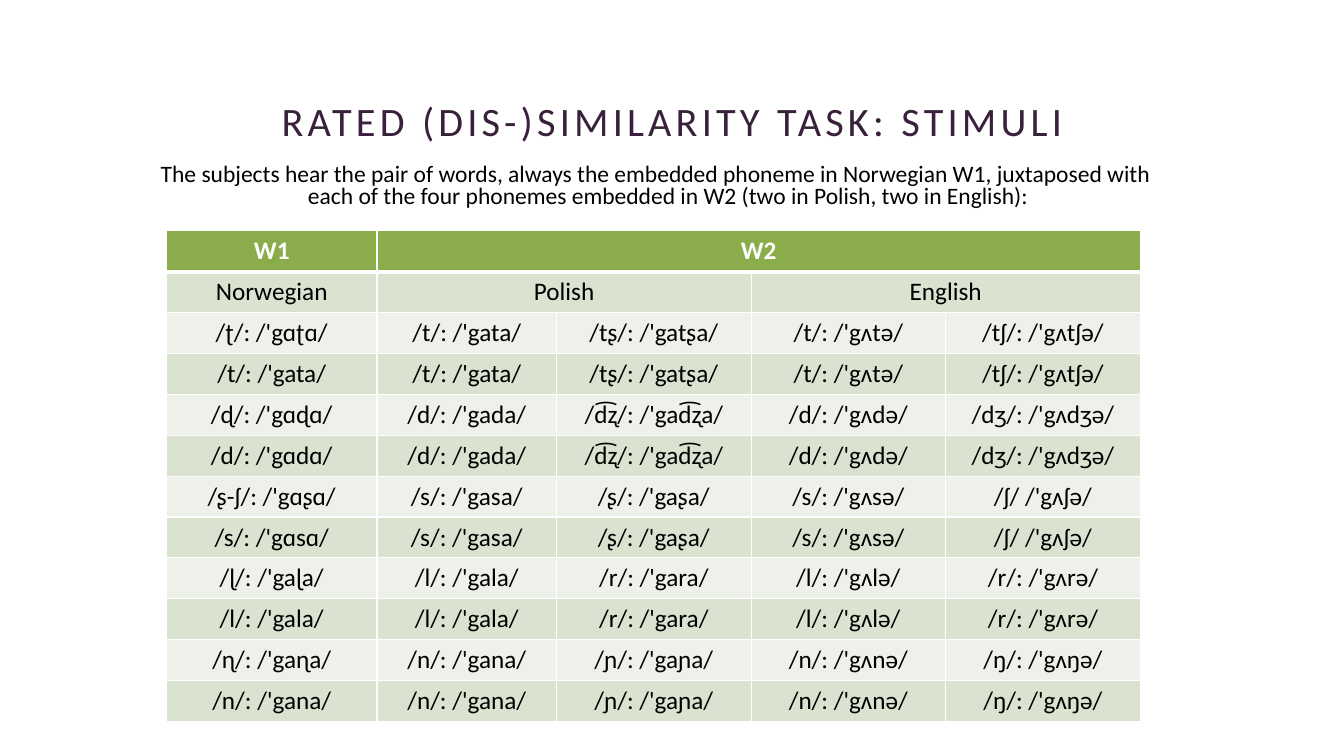
from lxml import etree
from pptx import Presentation
from pptx.dml.color import RGBColor
from pptx.enum.text import MSO_ANCHOR, PP_ALIGN
from pptx.oxml.ns import qn
from pptx.util import Inches, Pt

CENTER = PP_ALIGN.CENTER
TOP = MSO_ANCHOR.TOP
MIDDLE = MSO_ANCHOR.MIDDLE
BOTTOM = MSO_ANCHOR.BOTTOM

WHITE, BLACK, PLUM = "FFFFFF", "000000", "39213B"
GREEN, SAGE, PALE = "8AAC4A", "DAE3D0", "EDF1E9"


def write_text(frame, text, size, color, bold=False):
    """Put one centred paragraph in a text frame and return it."""
    paragraph = frame.paragraphs[0]
    paragraph.alignment = CENTER
    run = paragraph.add_run()
    run.text = text
    formats = {"name": "Calibri", "size": Pt(size), "bold": bold}
    for attribute, value in formats.items():
        setattr(run.font, attribute, value)
    run.font.color.rgb = RGBColor.from_string(color)
    return paragraph


def add_borders(cell, widths):
    """Draw white cell borders; widths maps a side tag to points."""
    properties = cell._tc.get_or_add_tcPr()
    for side, width in widths.items():
        line = etree.SubElement(properties, qn(f"a:{side}"), w=str(Pt(width)))
        fill = etree.SubElement(line, qn("a:solidFill"))
        etree.SubElement(fill, qn("a:srgbClr"), val=WHITE)


presentation = Presentation()
presentation.slide_width = Inches(13.33)
presentation.slide_height = Inches(7.5)
slide = presentation.slides.add_slide(presentation.slide_layouts[6])

# Title and introduction
text_boxes = [
    ((1.48, 0.7, 10.38, 0.79), BOTTOM, "RATED (DIS-)SIMILARITY TASK: STIMULI",
     28.8, PLUM, 0.9),
    ((1.25, 1.58, 10.5, 0.58), TOP,
     "The subjects hear the pair of words, always the embedded phoneme in "
     "Norwegian W1, juxtaposed with each of the four phonemes embedded in W2 "
     "(two in Polish, two in English):", 16.8, BLACK, 0.8),
]
paragraphs = []
for box, anchor, text, size, color, line_spacing in text_boxes:
    frame = slide.shapes.add_textbox(*map(Inches, box)).text_frame
    frame.word_wrap = True
    frame.vertical_anchor = anchor
    paragraph = write_text(frame, text, size, color)
    paragraph.line_spacing = line_spacing
    paragraphs.append(paragraph)

title, introduction = paragraphs
title.runs[0].font._element.set("spc", "300")
indent = introduction._p.get_or_add_pPr()
indent.set("marL", str(Inches(0.25)))
indent.set("indent", str(Inches(-0.25)))

# Each pair of Norwegian words shares the same Polish and English words
stimuli = [
    (["/ʈ/: /'gɑʈɑ/", "/t/: /'gata/"],
     ["/t/: /'gata/", "/tʂ/: /'gatʂa/", "/t/: /'gʌtə/", "/tʃ/: /'gʌtʃə/"]),
    (["/ɖ/: /'gɑɖɑ/", "/d/: /'gɑdɑ/"],
     ["/d/: /'gada/", "/d͡ʐ/: /'gad͡ʐa/", "/d/: /'gʌdə/", "/dʒ/: /'gʌdʒə/"]),
    (["/ʂ-ʃ/: /'gɑʂɑ/", "/s/: /'gɑsɑ/"],
     ["/s/: /'gasa/", "/ʂ/: /'gaʂa/", "/s/: /'gʌsə/", "/ʃ/ /'gʌʃə/"]),
    (["/ɭ/: /'gaɭa/", "/l/: /'gala/"],
     ["/l/: /'gala/", "/r/: /'gara/", "/l/: /'gʌlə/", "/r/: /'gʌrə/"]),
    (["/ɳ/: /'gaɳa/", "/n/: /'gana/"],
     ["/n/: /'gana/", "/ɲ/: /'gaɲa/", "/n/: /'gʌnə/", "/ŋ/: /'gʌŋə/"]),
]
rows = [["W1", "W2", "", "", ""], ["Norwegian", "Polish", "", "English", ""]]
for norwegian_words, second_words in stimuli:
    for norwegian in norwegian_words:
        rows.append([norwegian, *second_words])

column_widths = [2.09, 1.78, 1.93, 1.93, 1.93]
table = slide.shapes.add_table(
    len(rows), len(column_widths),
    Inches(1.65), Inches(2.29), Inches(9.67), Inches(4.87)).table
for column, width in zip(table.columns, column_widths):
    column.width = Inches(width)

for row, first, last in [(0, 1, 4), (1, 1, 2), (1, 3, 4)]:
    table.cell(row, first).merge(table.cell(row, last))

for row_index, words in enumerate(rows):
    header = row_index == 0
    if header:
        fill_color = GREEN
    else:
        fill_color = SAGE if row_index % 2 else PALE
    borders = {"lnL": 1, "lnR": 1,
               "lnT": 3 if row_index == 1 else 1, "lnB": 3 if header else 1}
    for column_index, word in enumerate(words):
        cell = table.cell(row_index, column_index)
        add_borders(cell, borders)
        cell.fill.solid()
        cell.fill.fore_color.rgb = RGBColor.from_string(fill_color)
        cell.vertical_anchor = MIDDLE
        if word:
            write_text(cell.text_frame, word, 18, WHITE if header else BLACK, header)

presentation.save("out.pptx")
